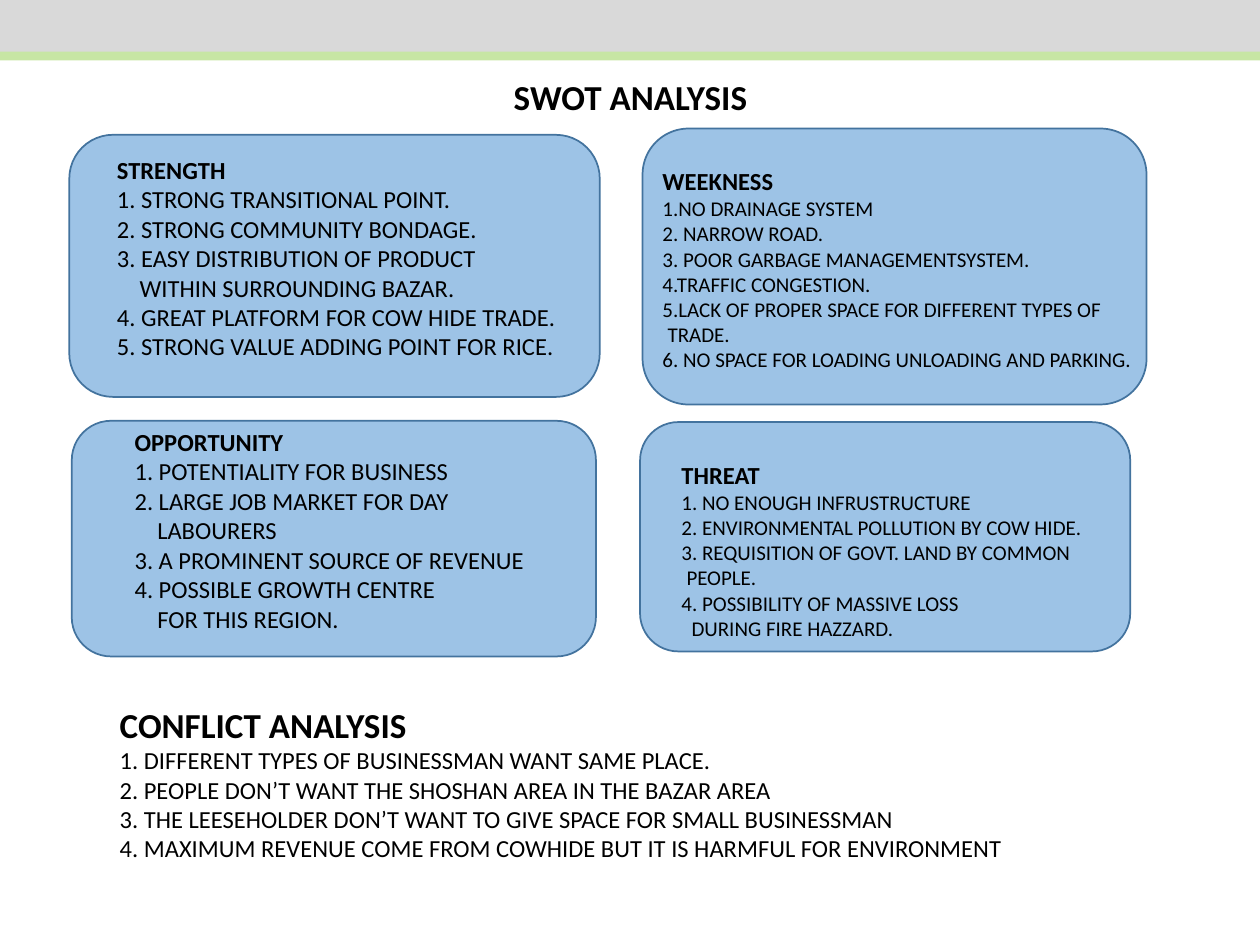
from dataclasses import dataclass

from lxml import etree
from pptx import Presentation
from pptx.dml.color import RGBColor
from pptx.enum import shapes, text
from pptx.oxml.ns import qn
from pptx.util import Inches, Pt


@dataclass(frozen=True)
class Theme:
    font: str = "Calibri"
    ink: str = "000000"
    band: str = "D9D9D9"
    accent: str = "C7E6A4"
    card: str = "9DC3E6"
    card_line: str = "43739E"
    title: int = 20
    body: int = 14
    small: int = 12


def rgb(code):
    return RGBColor.from_string(code)


class SlideBuilder:
    def __init__(self, s, theme):
        self.s, self.theme = s, theme

    def box(self, kind, at, fill, line=None):
        sp = self.s.shapes.add_shape(kind, *map(Inches, at))
        sp.shadow.inherit = False
        sp.fill.solid()
        sp.fill.fore_color.rgb = rgb(fill)
        if line:
            sp.line.color.rgb = rgb(line)
            sp.line.width = Pt(1)
        else:
            sp.line.fill.background()

    def place(self, sp, at):
        """Move a text shape and return its top-anchored, wrapping frame."""
        sp.left, sp.top, sp.width, sp.height = map(Inches, at)
        tf = sp.text_frame
        tf.word_wrap = True
        tf.auto_size = text.MSO_AUTO_SIZE.NONE
        tf.vertical_anchor = text.MSO_ANCHOR.TOP
        return tf

    def set_text(self, p, words, size, bold=False, indent=0, align=text.PP_ALIGN.LEFT):
        """Fill a paragraph as plain, unbulleted text."""
        pPr = p._p.get_or_add_pPr()
        pPr.set("marL", str(Inches(indent)))
        pPr.set("indent", "0")
        etree.SubElement(pPr, qn("a:buNone"))
        p.alignment = align
        p.space_before = Pt(0)
        r = p.add_run()
        r.text = words
        r.font.name, r.font.size, r.font.bold = self.theme.font, Pt(size), bold
        r.font.color.rgb = rgb(self.theme.ink)

    def title(self, words, at):
        tf = self.place(self.s.shapes.title, at)
        self.set_text(tf.paragraphs[0], words, self.theme.title, bold=True,
                      align=text.PP_ALIGN.RIGHT)

    def section(self, heading, lines, at, size, heading_size, sp=None):
        """Add a heading and its list; a (line, indent) pair continues an item."""
        tf = self.place(sp or self.s.shapes.add_textbox(0, 0, 0, 0), at)
        self.set_text(tf.paragraphs[0], heading, heading_size, bold=True)
        for line in lines:
            words, indent = line if isinstance(line, tuple) else (line, 0)
            self.set_text(tf.add_paragraph(), words, size, indent=indent)


def main():
    theme = Theme()
    prs = Presentation()
    prs.slide_width, prs.slide_height = Inches(10), Inches(7.5)
    s = prs.slides.add_slide(prs.slide_layouts[1])
    b = SlideBuilder(s, theme)

    b.box(shapes.MSO_SHAPE.RECTANGLE, (0, 0, 10, 0.42), theme.band)
    b.box(shapes.MSO_SHAPE.RECTANGLE, (0, 0.41, 10, 0.07), theme.accent)
    b.title("SWOT ANALYSIS", (3.8, 0.55, 2.23, 0.44))

    # heading, card area, text area, list size, lines
    cards = [
        ("STRENGTH", (0.55, 1.07, 4.21, 2.08), (0.83, 1.18, 3.73, 1.75), theme.body, [
            "1. STRONG TRANSITIONAL POINT.",
            "2. STRONG COMMUNITY BONDAGE.",
            "3. EASY DISTRIBUTION OF PRODUCT",
            ("WITHIN SURROUNDING BAZAR.", 0.18),
            "4. GREAT PLATFORM FOR COW HIDE TRADE.",
            "5. STRONG VALUE ADDING POINT FOR RICE."]),
        ("WEEKNESS", (5.1, 1.02, 4, 2.19), (5.16, 1.27, 4.34, 1.88), theme.small, [
            "1.NO DRAINAGE SYSTEM",
            "2. NARROW ROAD.",
            "3. POOR GARBAGE MANAGEMENTSYSTEM.",
            "4.TRAFFIC CONGESTION.",
            "5.LACK OF PROPER SPACE FOR DIFFERENT TYPES OF",
            ("TRADE.", 0.04),
            "6. NO SPACE FOR LOADING UNLOADING AND PARKING."]),
        ("OPPORTUNITY", (0.57, 3.34, 4.16, 1.87), (0.97, 3.34, 3.77, 1.75), theme.body, [
            "1. POTENTIALITY FOR BUSINESS",
            "2. LARGE JOB MARKET FOR DAY",
            ("LABOURERS", 0.18),
            "3. A PROMINENT SOURCE OF REVENUE",
            "4. POSSIBLE GROWTH CENTRE",
            ("FOR THIS REGION.", 0.18)]),
        ("THREAT", (5.08, 3.35, 3.89, 1.82), (5.31, 3.6, 4.32, 1.55), theme.small, [
            "1. NO ENOUGH INFRUSTRUCTURE",
            "2. ENVIRONMENTAL POLLUTION BY COW HIDE.",
            "3. REQUISITION OF GOVT. LAND BY COMMON",
            ("PEOPLE.", 0.04),
            "4. POSSIBILITY OF MASSIVE LOSS",
            ("DURING FIRE HAZZARD.", 0.08)]),
    ]
    for heading, card_at, text_at, size, lines in cards:
        b.box(shapes.MSO_SHAPE.ROUNDED_RECTANGLE, card_at, theme.card, theme.card_line)
        b.section(heading, lines, text_at, size, theme.body)

    b.section("CONFLICT ANALYSIS", [
        "1. DIFFERENT TYPES OF BUSINESSMAN WANT SAME PLACE.",
        "2. PEOPLE DON’T WANT THE SHOSHAN AREA IN THE BAZAR AREA",
        "3. THE LEESEHOLDER DON’T WANT TO GIVE SPACE FOR SMALL BUSINESSMAN",
        "4. MAXIMUM REVENUE COME FROM COWHIDE BUT IT IS HARMFUL FOR ENVIRONMENT",
    ], (0.85, 5.53, 8.67, 1.38), theme.body, theme.title, sp=s.placeholders[1])

    prs.save("out.pptx")


if __name__ == "__main__":
    main()
